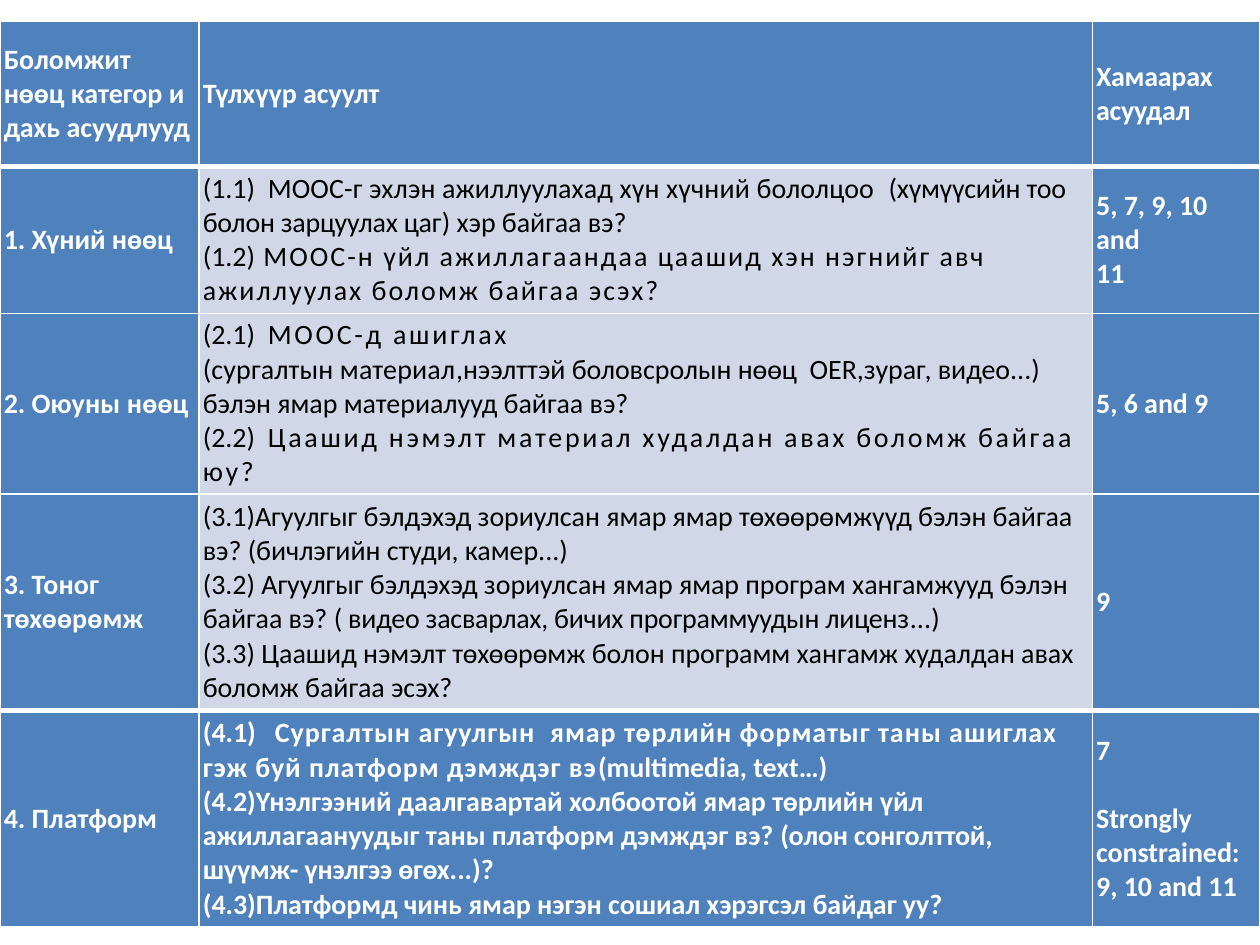
import pptx
import pptx.util
import pptx.dml.color
import pptx.enum.text
import pptx.oxml.ns
import lxml.etree
from dataclasses import dataclass


@dataclass(frozen=True)
class Theme:
    font: str = "Calibri"
    size: float = 16
    blue: str = "4F81BD"
    pale: str = "D0D8E8"
    white: str = "FFFFFF"
    black: str = "000000"
    thin: float = 1
    thick: float = 3
    inset: float = 0.03
    line_gap: float = 19.5


THEME = Theme()
TOP = 0.17
COLUMNS = [1.58, 7.09, 1.33]
ROWS = [1.15, 1.17, 1.43, 1.72, 1.72]

# A cell is a list of paragraphs; a paragraph is a list of (text, letter spacing in points)
HEADER = [
    [[("Боломжит нөөц категор и дахь асуудлууд", 0)]],
    [[("Түлхүүр асуулт", 0)]],
    [[("Хамаарах асуудал", -0.1)]],
]
HUMAN = [
    [[("1. Хүний нөөц", 0)]],
    [[("(1.1)  ", 0), ("МООС-г эхлэн ажиллуулахад хүн хүчний бололцоо  ", 0.1),
      ("(хүмүүсийн тоо болон зарцуулах цаг", -0.1), (") хэр байгаа вэ?", 0)],
     [("(1.2)", 0),
      (" MOOC-н үйл ажиллагаандаа цаашид хэн нэгнийг авч ажиллуулах боломж байгаа эсэх?", 1.2)]],
    [[("5, 7, 9, 10 and", 0)], [("11", 0.1)]],
]
INTELLECTUAL = [
    [[("2. ", 0), ("Оюуны нөөц", 0.1)]],
    [[("(2.1)  ", 0), ("МООС-д ашиглах", 1.6)],
     [("(сургалтын материал", 0.1),
      (",нээлттэй боловсролын нөөц  OER,зураг, видео...) бэлэн ямар материалууд байгаа вэ?", 0)],
     [("(2.2)  ", 0), ("Цаашид нэмэлт материал худалдан авах боломж байгаа юу", 1.6), ("?", 0)]],
    [[("5, 6 and 9", 0)]],
]
EQUIPMENT = [
    [[("3. ", 0), ("Тоног төхөөрөмж", 0.1)]],
    [[("(3.1)Агуулгыг бэлдэхэд зориулсан ямар ямар төхөөрөмжүүд бэлэн байгаа вэ? "
       "(бичлэгийн студи, камер...)", 0)],
     [("(3.2) Агуулгыг бэлдэхэд зориулсан ямар ямар програм хангамжууд бэлэн байгаа вэ? ", 0),
      ("( видео засварлах, бичих программуудын лиценз", -0.1), ("...)", 0.1)],
     [("(3.3) Цаашид нэмэлт төхөөрөмж болон программ хангамж худалдан авах боломж байгаа эсэх?", 0)]],
    [[("9", 0)]],
]
PLATFORM = [
    [[("4. Платформ", 0)]],
    [[("(4.1)   ", 0),
      ("Сургалтын агуулгын  ямар төрлийн форматыг таны ашиглах гэж буй платформ дэмждэг вэ", 0.6),
      ("(multimedia, text…)", 0)],
     [("(4.2)Үнэлгээний даалгавартай холбоотой ямар төрлийн үйл ажиллагаануудыг таны "
       "платформ дэмждэг вэ? ", 0),
      ("(олон сонголттой, шүүмж- үнэлгээ өгөх.", -0.1), ("..)?", 0)],
     [("(4.3)Платформд чинь ямар нэгэн сошиал хэрэгсэл байдаг уу?", 0)]],
    [[("7", 0)], [("Strongly constrained:", 0)], [("9, 10 and 11", 0)]],
]
TABLE = [HEADER, HUMAN, INTELLECTUAL, EQUIPMENT, PLATFORM]


def rgb(color):
    return pptx.dml.color.RGBColor.from_string(color)


def write_paragraph(p, runs, color, bold):
    for text, spacing in runs:
        r = p.add_run()
        r.text = text
        r.font.name = THEME.font
        r.font.size = pptx.util.Pt(THEME.size)
        r.font.bold = bold
        r.font.color.rgb = rgb(color)
        if spacing:
            r.font._element.set("spc", str(round(spacing * 100)))


def add_borders(cell, top, bottom):
    qn = pptx.oxml.ns.qn
    tc_pr = cell._tc.get_or_add_tcPr()
    widths = {"L": THEME.thin, "R": THEME.thin, "T": top, "B": bottom}
    for side, width in widths.items():
        ln = lxml.etree.SubElement(tc_pr, qn(f"a:ln{side}"), w=str(pptx.util.Pt(width)))
        fill = lxml.etree.SubElement(ln, qn("a:solidFill"))
        lxml.etree.SubElement(fill, qn("a:srgbClr"), val=THEME.white)


def fill_cell(cell, paragraphs, is_question, top, bottom):
    add_borders(cell, top, bottom)
    cell.fill.solid()
    cell.fill.fore_color.rgb = rgb(THEME.pale if is_question else THEME.blue)
    cell.vertical_anchor = pptx.enum.text.MSO_ANCHOR.MIDDLE
    cell.margin_left = cell.margin_right = pptx.util.Inches(THEME.inset)
    cell.margin_top = cell.margin_bottom = 0
    tf = cell.text_frame
    for i, runs in enumerate(paragraphs):
        p = tf.add_paragraph() if i else tf.paragraphs[0]
        write_paragraph(p, runs, THEME.black if is_question else THEME.white, not is_question)


def add_resource_table(s):
    last = len(ROWS) - 1
    frame = s.shapes.add_table(len(ROWS), len(COLUMNS), 0, pptx.util.Inches(TOP),
                               pptx.util.Inches(sum(COLUMNS)), pptx.util.Inches(sum(ROWS)))
    table = frame.table
    for column, width in zip(table.columns, COLUMNS):
        column.width = pptx.util.Inches(width)
    for row, height in zip(table.rows, ROWS):
        row.height = pptx.util.Inches(height)

    # Thick rules sit below the header and above the last row
    rules = [THEME.thin, THEME.thick, THEME.thin, THEME.thin, THEME.thick, THEME.thin]
    for i, row in enumerate(TABLE):
        for j, paragraphs in enumerate(row):
            is_question = j == 1 and 0 < i < last
            fill_cell(table.cell(i, j), paragraphs, is_question, rules[i], rules[i + 1])

    # One line of space sets the constrained items apart
    constrained = table.cell(last, 2).text_frame.paragraphs[1]
    constrained.space_before = pptx.util.Pt(THEME.line_gap)


def main():
    prs = pptx.Presentation()
    prs.slide_width = pptx.util.Inches(10)
    prs.slide_height = pptx.util.Inches(7.5)
    s = prs.slides.add_slide(prs.slide_layouts[6])
    add_resource_table(s)
    prs.save("out.pptx")


if __name__ == "__main__":
    main()
